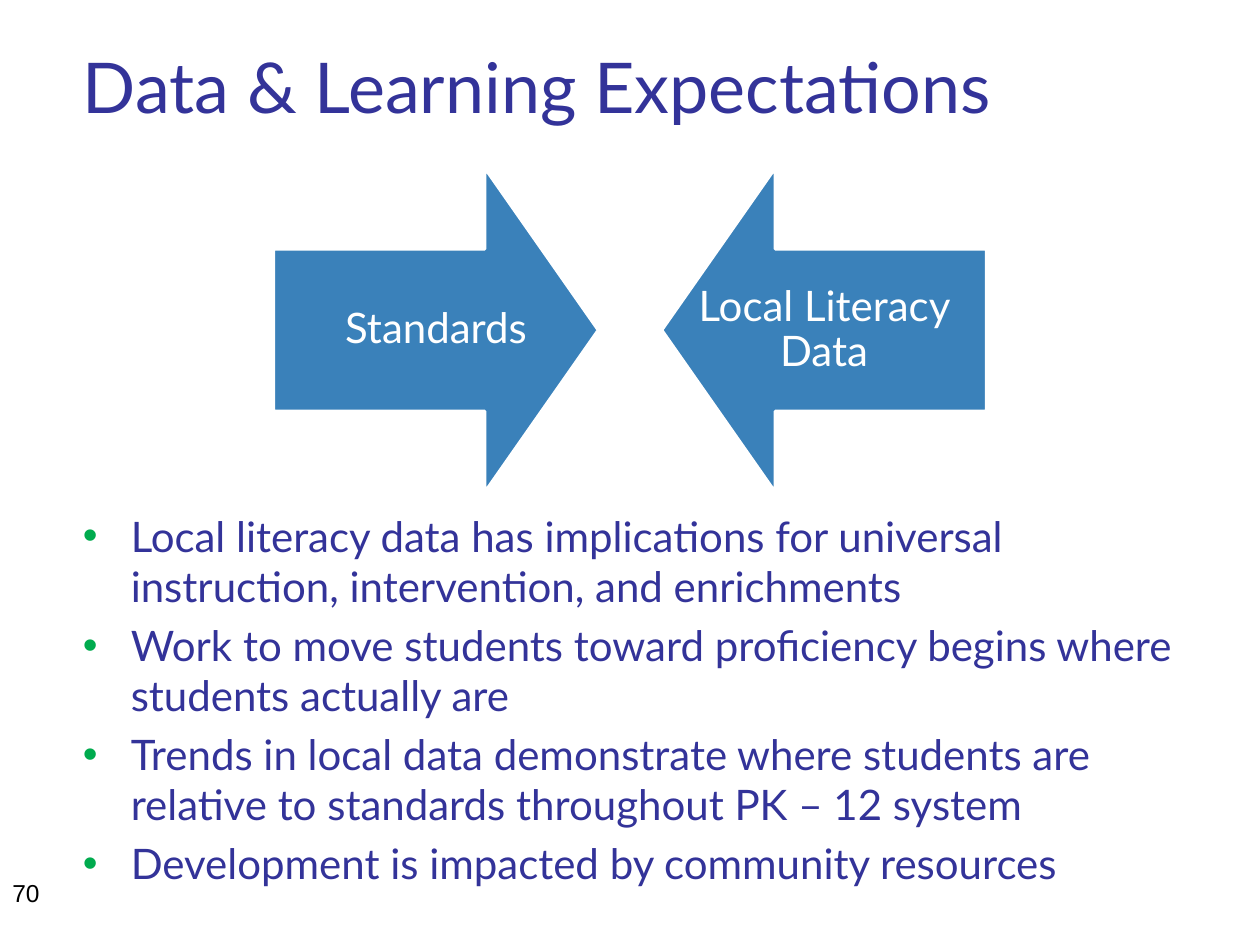
from pptx import Presentation
from pptx.dml.color import RGBColor
from pptx.enum import shapes, text
from pptx.oxml.ns import qn
from pptx.util import Inches, Pt
from lxml import etree

NAVY, BLUE, GREEN, WHITE, BLACK = "333399", "3A81BA", "00AB4E", "FFFFFF", "000000"
ARROW_SIZE = 2.58
ARROWS = [("Local Literacy Data", 5.25, 90), ("Standards", 2.17, 270)]
POINTS = [
    "Local literacy data has implications for universal instruction, intervention, and enrichments",
    "Work to move students toward proficiency begins where students actually are",
    "Trends in local data demonstrate where students are relative to standards throughout PK – 12 system",
    "Development is impacted by community resources",
]


def color(value):
    return RGBColor.from_string(value)


def style(para, size, value, font="Lato"):
    para.font.size = Pt(size)
    para.font.name = font
    para.font.color.rgb = color(value)


def add_text(page, bounds, lines, size, value, font="Lato"):
    box = page.shapes.add_textbox(*map(Inches, bounds))
    frame = box.text_frame
    frame.word_wrap = True
    frame.text = "\n".join(lines)
    for para in frame.paragraphs:
        style(para, size, value, font)
    return frame


def add_bullet(para):
    props = para._p.get_or_add_pPr()
    props.set("marL", str(Inches(0.38)))
    props.set("indent", str(-Inches(0.38)))
    tint = etree.SubElement(props, qn("a:buClr"))
    etree.SubElement(tint, qn("a:srgbClr"), val=GREEN)
    etree.SubElement(props, qn("a:buFont"), typeface="Arial")
    etree.SubElement(props, qn("a:buChar"), char="•")


def add_points(page, bounds):
    box = page.shapes.add_textbox(*map(Inches, bounds))
    frame = box.text_frame
    frame.word_wrap = True
    for index, point in enumerate(POINTS):
        para = frame.add_paragraph() if index else frame.paragraphs[0]
        para.text = point
        add_bullet(para)
        if index:
            para.space_before = Pt(4.8)
        style(para, 24, NAVY)


def add_arrow(page, bounds, label, rotation):
    arrow = page.shapes.add_shape(shapes.MSO_SHAPE.DOWN_ARROW, *map(Inches, bounds))
    arrow.rotation = rotation
    arrow.adjustments[0] = 0.5
    arrow.adjustments[1] = 0.35
    arrow.shadow.inherit = False
    arrow.fill.solid()
    arrow.fill.fore_color.rgb = color(BLUE)
    arrow.line.color.rgb = color(WHITE)
    arrow.line.width = Pt(2)

    frame = add_text(page, bounds, [label], 24, WHITE)
    frame.vertical_anchor = text.MSO_ANCHOR.MIDDLE
    frame.margin_left = frame.margin_right = Inches(0.19)
    frame.margin_top = frame.margin_bottom = Inches(0.19)
    para = frame.paragraphs[0]
    para.alignment = text.PP_ALIGN.CENTER
    para.line_spacing = 0.9


def main():
    deck = Presentation()
    deck.slide_width, deck.slide_height = Inches(10), Inches(7.5)
    page = deck.slides.add_slide(deck.slide_layouts[6])
    add_text(page, (0.56, 0.3, 8.91, 1.25), ["Data & Learning Expectations"], 40, NAVY)
    for label, left, rotation in ARROWS:
        add_arrow(page, (left, 1.33, ARROW_SIZE, ARROW_SIZE), label, rotation)
    add_points(page, (0.56, 4, 9.1, 3.28))
    add_text(page, (0, 6.92, 2.33, 0.4), ["70"], 14, BLACK, "Arial")
    deck.save("out.pptx")


if __name__ == "__main__":
    main()
